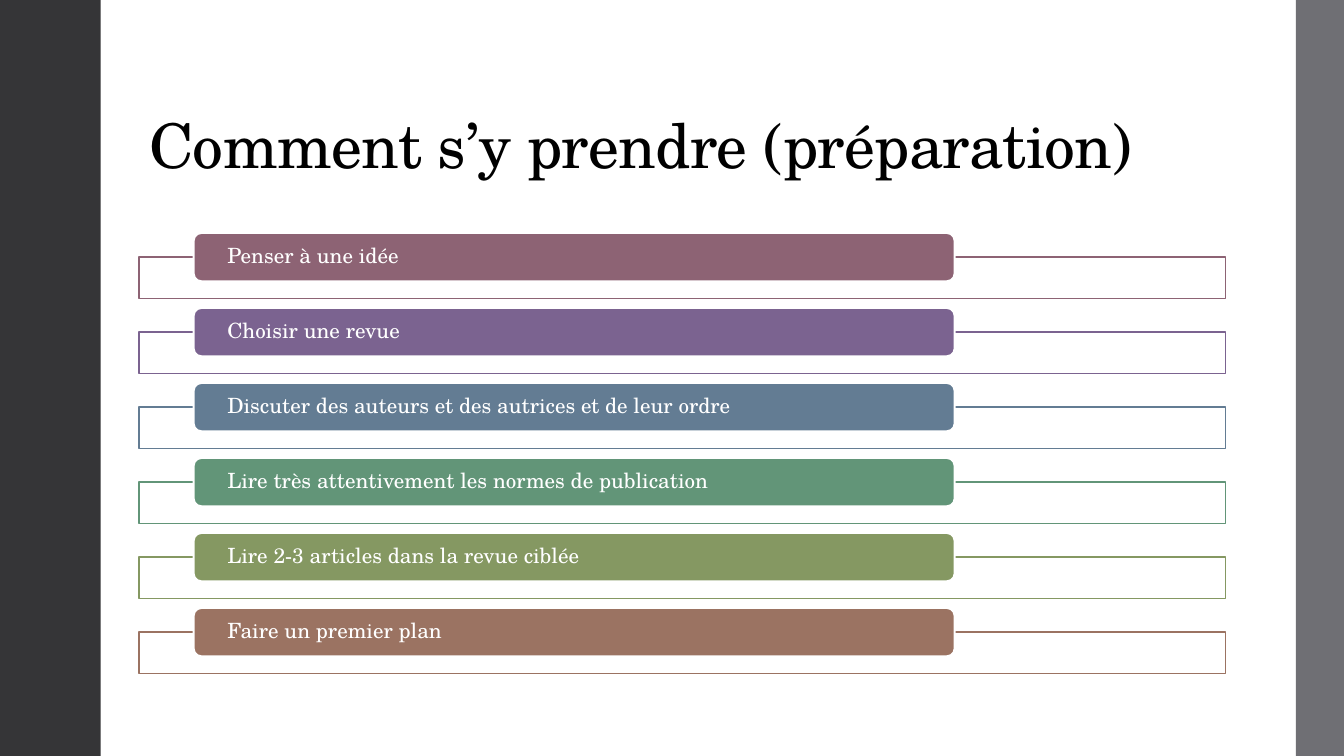
from pptx import Presentation
from pptx.dml.color import RGBColor
from pptx.enum.shapes import MSO_SHAPE
from pptx.enum.text import MSO_ANCHOR, PP_ALIGN
from pptx.util import Cm, Pt

TITLE = "Comment s’y prendre (préparation)"
STEPS = [
    ("Penser à une idée", "8D6374"),
    ("Choisir une revue", "7B6390"),
    ("Discuter des auteurs et des autrices et de leur ordre", "637C93"),
    ("Lire très attentivement les normes de publication", "629578"),
    ("Lire 2-3 articles dans la revue ciblée", "859862"),
    ("Faire un premier plan", "9B7362"),
]
FONT = "TeX Gyre Schola"
WHITE = "FFFFFF"
WIDTH, HEIGHT = 33.87, 19.05
LEFT_BAND, RIGHT_BAND = 2.54, 1.21
CONTENT_LEFT, CONTENT_WIDTH = 3.51, 27.38
FRAME_HEIGHT, FRAME_DROP = 1.04, 0.61
BAR_LEFT, BAR_TOP, BAR_WIDTH, BAR_HEIGHT = 4.88, 5.87, 19.18, 1.22
STEP_PITCH = 1.89
BAR_INSET = 0.79


def color(value):
    return RGBColor.from_string(value)


def add_box(page, kind, left, top, width, height, fill, line=None, weight=0):
    box = page.shapes.add_shape(kind, Cm(left), Cm(top), Cm(width), Cm(height))
    box.shadow.inherit = False
    box.fill.solid()
    box.fill.fore_color.rgb = color(fill)
    if line:
        box.line.color.rgb = color(line)
        box.line.width = Pt(weight)
    else:
        box.line.fill.background()
    return box


def write(box, text, size, ink, anchor):
    frame = box.text_frame
    frame.word_wrap = True
    frame.vertical_anchor = anchor
    para = frame.paragraphs[0]
    para.alignment = PP_ALIGN.LEFT
    para.line_spacing = 0.9
    para.font.name = FONT
    para.font.size = Pt(size)
    para.font.color.rgb = color(ink)
    span = para.add_run()
    span.text = text
    return span


def add_step(page, top, text, fill):
    add_box(page, MSO_SHAPE.RECTANGLE, CONTENT_LEFT, top + FRAME_DROP,
            CONTENT_WIDTH, FRAME_HEIGHT, WHITE, fill, 1.1)
    bar = add_box(page, MSO_SHAPE.ROUNDED_RECTANGLE, BAR_LEFT, top,
                  BAR_WIDTH, BAR_HEIGHT, fill, WHITE, 1.35)
    frame = bar.text_frame
    frame.margin_left = frame.margin_right = Cm(BAR_INSET)
    frame.margin_top = frame.margin_bottom = 0
    write(bar, text, 15, WHITE, MSO_ANCHOR.MIDDLE)


def main():
    deck = Presentation()
    deck.slide_width, deck.slide_height = Cm(WIDTH), Cm(HEIGHT)
    page = deck.slides.add_slide(deck.slide_layouts[6])
    page.background.fill.solid()
    page.background.fill.fore_color.rgb = color(WHITE)

    title = page.shapes.add_textbox(Cm(CONTENT_LEFT), Cm(1.02), Cm(CONTENT_WIDTH), Cm(3.68))
    span = write(title, TITLE, 44, "000000", MSO_ANCHOR.BOTTOM)
    span.font._element.set("spc", "-50")

    add_box(page, MSO_SHAPE.RECTANGLE, 0, 0, LEFT_BAND, HEIGHT, "353537")
    add_box(page, MSO_SHAPE.RECTANGLE, WIDTH - RIGHT_BAND, 0, RIGHT_BAND, HEIGHT, "6F6F74")

    for index, (text, fill) in enumerate(STEPS):
        add_step(page, BAR_TOP + index * STEP_PITCH, text, fill)

    deck.save("out.pptx")


if __name__ == "__main__":
    main()
